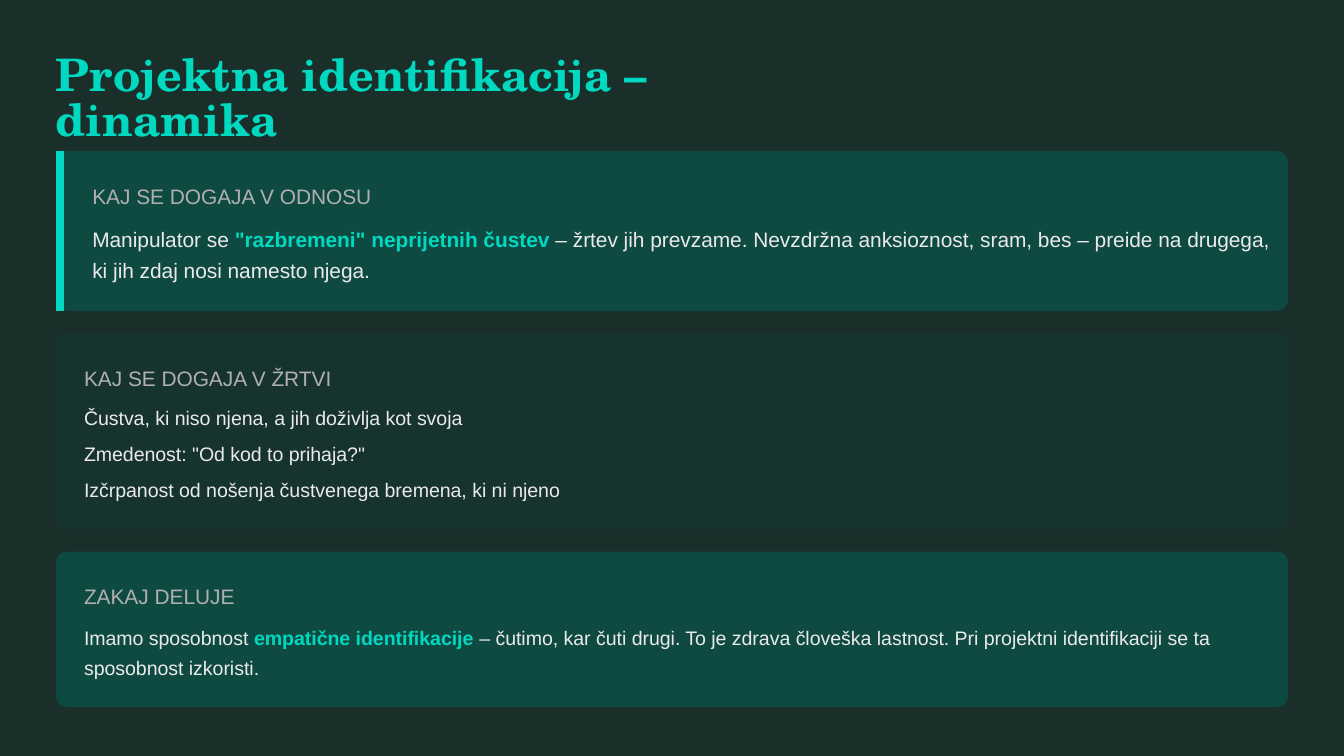
from dataclasses import dataclass

from pptx import Presentation
from pptx.dml.color import RGBColor
from pptx.enum.shapes import MSO_CONNECTOR, MSO_SHAPE
from pptx.enum.text import MSO_ANCHOR, MSO_AUTO_SIZE, PP_ALIGN
from pptx.oxml.ns import qn
from pptx.util import Emu, Pt

ROUNDED = MSO_SHAPE.ROUNDED_RECTANGLE
STRAIGHT = MSO_CONNECTOR.STRAIGHT
TOP = MSO_ANCHOR.TOP
LEFT = PP_ALIGN.LEFT
NO_FIT = MSO_AUTO_SIZE.NONE
TITLE_ONLY = 5
EMU_PER_PX = 9525


@dataclass(frozen=True)
class Theme:
    background: str = "1A2E2A"
    panel: str = "0F4A42"
    quiet_panel: str = "16332E"
    accent: str = "00D9C0"
    text: str = "EAEAEA"
    muted: str = "B0B0B0"
    title_font: str = "TeX Gyre Schola"
    body_font: str = "Arial"
    title_size: float = 24
    large_size: float = 11.2
    body_size: float = 10.5


@dataclass(frozen=True)
class Span:
    text: str
    strong: bool = False


@dataclass(frozen=True)
class Card:
    top: int
    height: int
    fill: str
    heading: str
    paragraphs: list[list[Span]]
    body_height: int
    size: float
    line_height: float
    space_after: float = 0
    accent_bar: bool = False


THEME = Theme()
MARGIN = 40
CARD_WIDTH = 880
TEXT_RIGHT = 917
RADIUS = 8
PADDING = 20
BODY_OFFSET = 49
BAR_WIDTH = 6

CARDS = [
    Card(108, 114, THEME.panel, "KAJ SE DOGAJA V ODNOSU",
         [[Span("Manipulator se "),
           Span('"razbremeni" neprijetnih čustev', strong=True),
           Span(" – žrtev jih prevzame. Nevzdržna anksioznost, sram, bes – "
                "preide na drugega, ki jih zdaj nosi namesto njega.")]],
         45, THEME.large_size, 16.9, accent_bar=True),
    Card(238, 140, THEME.quiet_panel, "KAJ SE DOGAJA V ŽRTVI",
         [[Span("Čustva, ki niso njena, a jih doživlja kot svoja")],
          [Span('Zmedenost: "Od kod to prihaja?"')],
          [Span("Izčrpanost od nošenja čustvenega bremena, ki ni njeno")]],
         71, THEME.body_size, 14.7, space_after=4.5),
    Card(394, 111, THEME.panel, "ZAKAJ DELUJE",
         [[Span("Imamo sposobnost "),
           Span("empatične identifikacije", strong=True),
           Span(" – čutimo, kar čuti drugi. To je zdrava človeška lastnost. "
                "Pri projektni identifikaciji se ta sposobnost izkoristi.")]],
         42, THEME.body_size, 15.8),
]


def px(value: int) -> Emu:
    return Emu(value * EMU_PER_PX)


def color(value: str) -> RGBColor:
    return RGBColor.from_string(value)


def write_text(box, paragraphs: list[list[Span]], *, size: float, fill: str,
               line_height: float, font: str = THEME.body_font,
               space_after: float = 0) -> None:
    """Fill a box with formatted paragraphs; strong spans take the accent."""
    frame = box.text_frame
    frame.word_wrap = True
    frame.auto_size = NO_FIT
    frame.vertical_anchor = TOP
    frame.margin_left = frame.margin_right = 0
    frame.margin_top = frame.margin_bottom = 0
    for index, spans in enumerate(paragraphs):
        para = frame.add_paragraph() if index else frame.paragraphs[0]
        para.alignment = LEFT
        para.line_spacing = Pt(line_height)
        para.space_before = Pt(0)
        para.space_after = Pt(space_after)
        for span in spans:
            run = para.add_run()
            run.text = span.text
            run.font.name = font
            run.font.size = Pt(size)
            run.font.bold = span.strong
            run.font.color.rgb = color(THEME.accent if span.strong else fill)


def add_accent_bar(page, card: Card) -> None:
    x = px(MARGIN + BAR_WIDTH // 2)
    bar = page.shapes.add_connector(
        STRAIGHT, x, px(card.top), x, px(card.top + card.height))
    bar.line.color.rgb = color(THEME.accent)
    bar.line.width = px(BAR_WIDTH)
    properties = bar._element.spPr
    properties.append(properties.makeelement(qn("a:effectLst"), {}))


def add_card(page, card: Card) -> None:
    panel = page.shapes.add_shape(
        ROUNDED, px(MARGIN), px(card.top), px(CARD_WIDTH), px(card.height))
    panel.adjustments[0] = RADIUS / card.height
    panel.shadow.inherit = False
    panel.fill.solid()
    panel.fill.fore_color.rgb = color(card.fill)
    panel.line.fill.background()

    left = MARGIN + PADDING
    if card.accent_bar:
        add_accent_bar(page, card)
        left += BAR_WIDTH
    width = TEXT_RIGHT - left

    heading = page.shapes.add_textbox(
        px(left), px(card.top + PADDING), px(width), px(21))
    write_text(heading, [[Span(card.heading)]], size=THEME.large_size,
               fill=THEME.muted, line_height=15.8)
    body = page.shapes.add_textbox(
        px(left), px(card.top + BODY_OFFSET), px(width), px(card.body_height))
    write_text(body, card.paragraphs, size=card.size, fill=THEME.text,
               line_height=card.line_height, space_after=card.space_after)


def main() -> None:
    deck = Presentation()
    deck.slide_width, deck.slide_height = px(960), px(540)
    page = deck.slides.add_slide(deck.slide_layouts[TITLE_ONLY])
    page.background.fill.solid()
    page.background.fill.fore_color.rgb = color(THEME.background)

    # Title
    title = page.shapes.title
    title.left, title.top = px(MARGIN), px(40)
    title.width, title.height = px(497), px(32)
    write_text(title, [[Span("Projektna identifikacija – dinamika", strong=True)]],
               size=THEME.title_size, fill=THEME.accent, line_height=24,
               font=THEME.title_font)

    # Cards
    for card in CARDS:
        add_card(page, card)

    deck.save("out.pptx")


if __name__ == "__main__":
    main()
